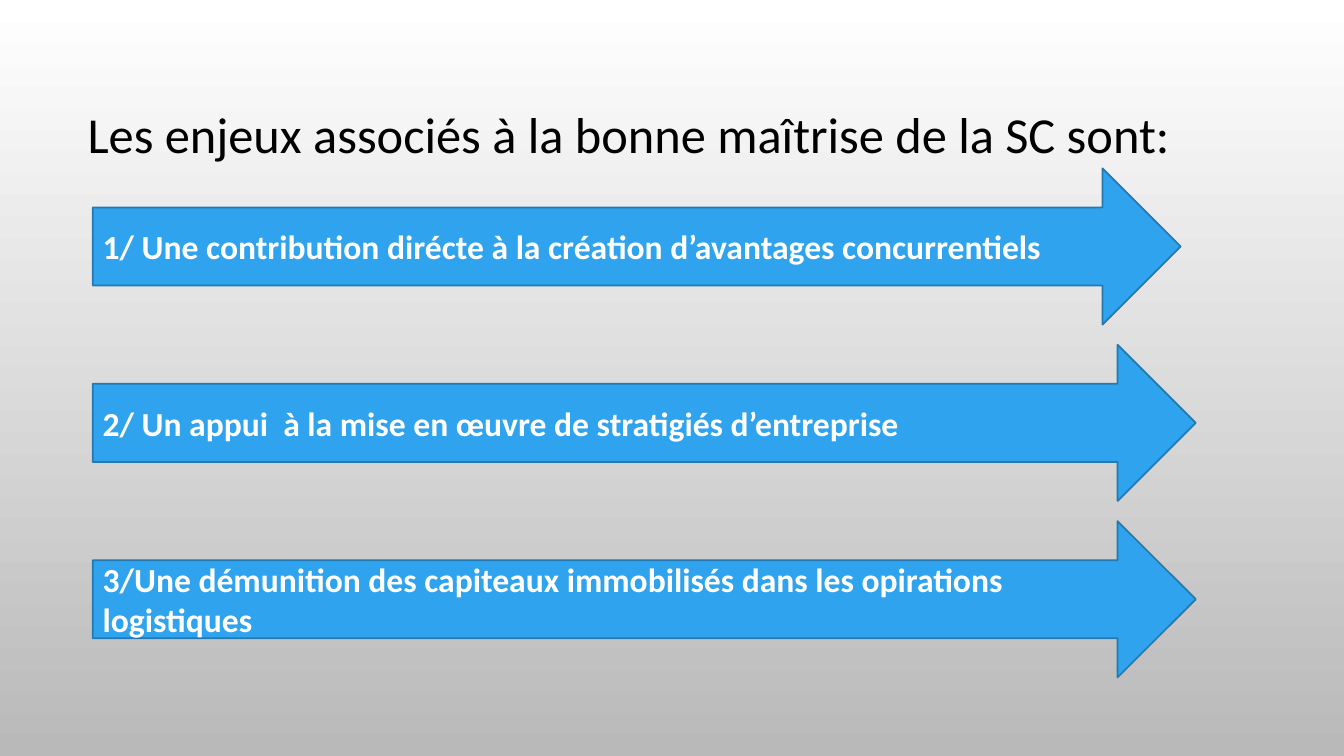
from pptx import Presentation
from pptx import util as u
from pptx.dml.color import RGBColor
from pptx.enum import shapes, text

PX = 9144  # EMU per px, 100 px to the inch
FONT = "Calibri"
COLORS = {
    "bg_top": "FFFFFF",
    "bg_bottom": "B9B9B9",
    "title": "000000",
    "arrow": "2FA3EE",
    "arrow_line": "2379B0",
    "arrow_text": "FFFFFF",
}
ARROW_LEFT, ARROW_TOP, ARROW_HEIGHT, ARROW_STEP = 92, 167, 155, 175
ARROWS = [
    (1079, text.PP_ALIGN.JUSTIFY,
     "1/ Une contribution dirécte à la création d’avantages concurrentiels"),
    (1094, text.PP_ALIGN.JUSTIFY,
     "2/ Un appui  à la mise en œuvre de stratigiés d’entreprise"),
    (1094, text.PP_ALIGN.LEFT,
     "3/Une démunition des capiteaux immobilisés dans les opirations logistiques"),
]


def rgb(name):
    return RGBColor.from_string(COLORS[name])


def box(*lengths):
    return [u.Emu(n * PX) for n in lengths]


def format_run(r, size, color, bold=False):
    r.font.name = FONT
    r.font.size = u.Pt(size)
    r.font.bold = bold
    r.font.color.rgb = rgb(color)


def set_background(s):
    fill = s.background.fill
    fill.gradient()
    fill.gradient_angle = 270
    for stop, position, name in zip(fill.gradient_stops, (0, 1), ("bg_top", "bg_bottom")):
        stop.position = position
        stop.color.rgb = rgb(name)


def add_title(s, wording):
    sp = s.shapes.add_textbox(*box(77, 85, 1156, 75))
    tf = sp.text_frame
    tf.word_wrap = True
    p = tf.paragraphs[0]
    p.text = wording
    p.line_spacing = 1.2
    format_run(p.runs[0], 36, "title")


def add_arrow(s, top, width, align, wording):
    sp = s.shapes.add_shape(shapes.MSO_SHAPE.RIGHT_ARROW,
                            *box(ARROW_LEFT, top, width, ARROW_HEIGHT))
    sp.shadow.inherit = False
    sp.fill.solid()
    sp.fill.fore_color.rgb = rgb("arrow")
    sp.line.color.rgb = rgb("arrow_line")
    sp.line.width = u.Pt(1.25)
    tf = sp.text_frame
    tf.word_wrap = True
    tf.vertical_anchor = text.MSO_ANCHOR.MIDDLE
    p = tf.paragraphs[0]
    p.text = wording
    p.alignment = align
    format_run(p.runs[0], 24, "arrow_text", bold=True)


def main():
    prs = Presentation()
    prs.slide_width, prs.slide_height = box(1333, 750)
    s = prs.slides.add_slide(prs.slide_layouts[6])
    set_background(s)

    # Heading
    add_title(s, "Les enjeux associés à la bonne maîtrise de la SC sont:")

    # One arrow per stake, evenly stepped
    for i, (width, align, wording) in enumerate(ARROWS):
        add_arrow(s, ARROW_TOP + i * ARROW_STEP, width, align, wording)

    prs.save("out.pptx")


if __name__ == "__main__":
    main()
